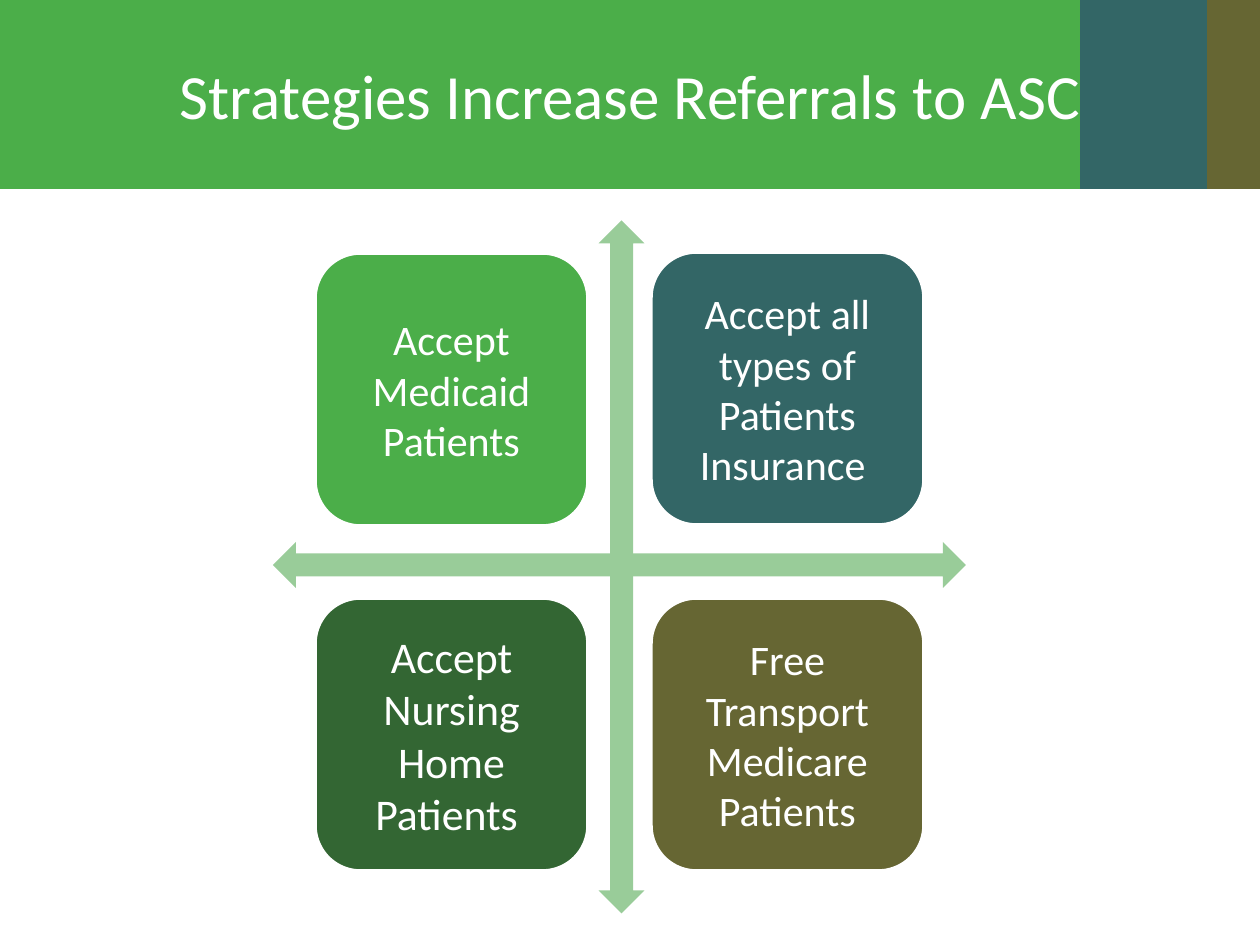
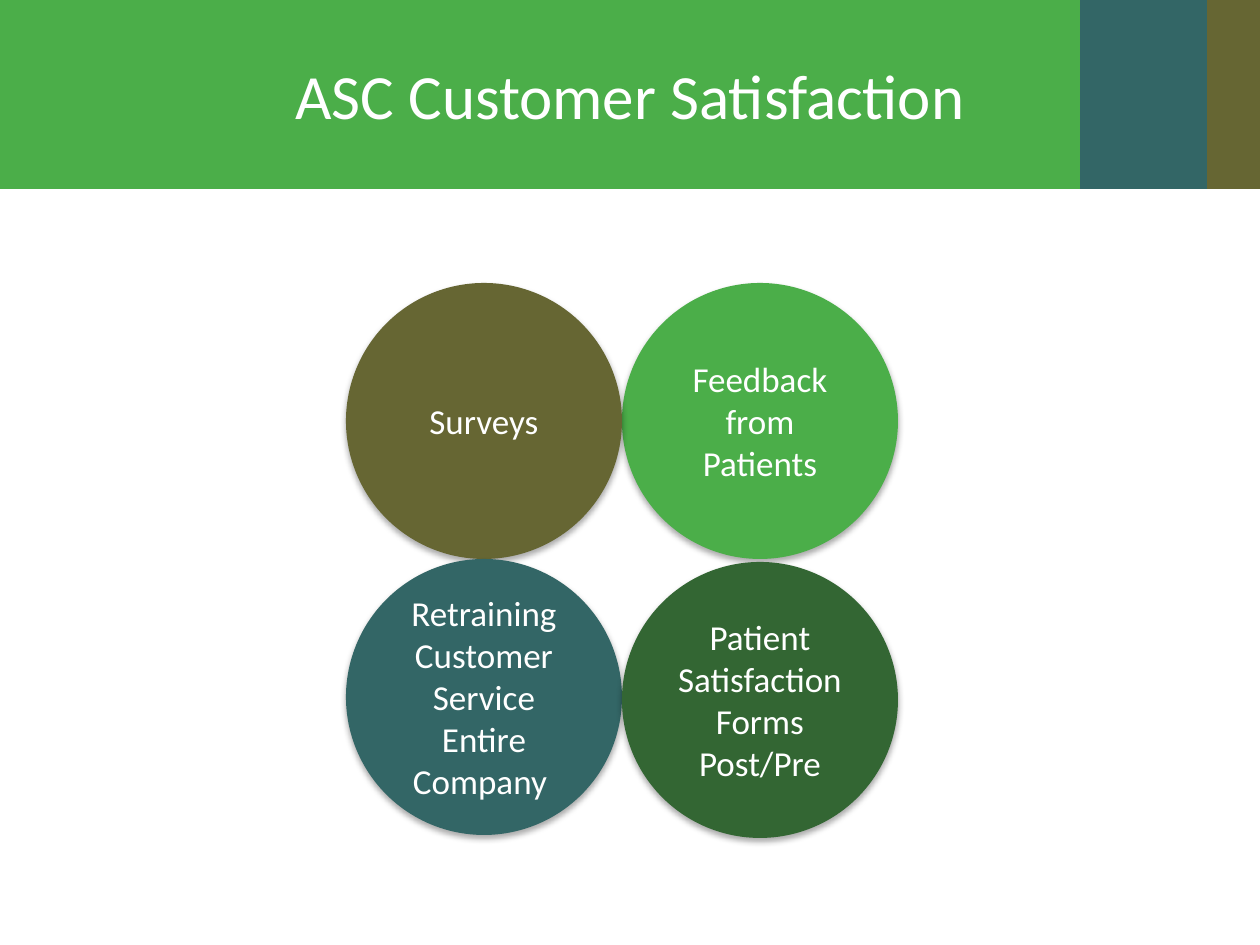
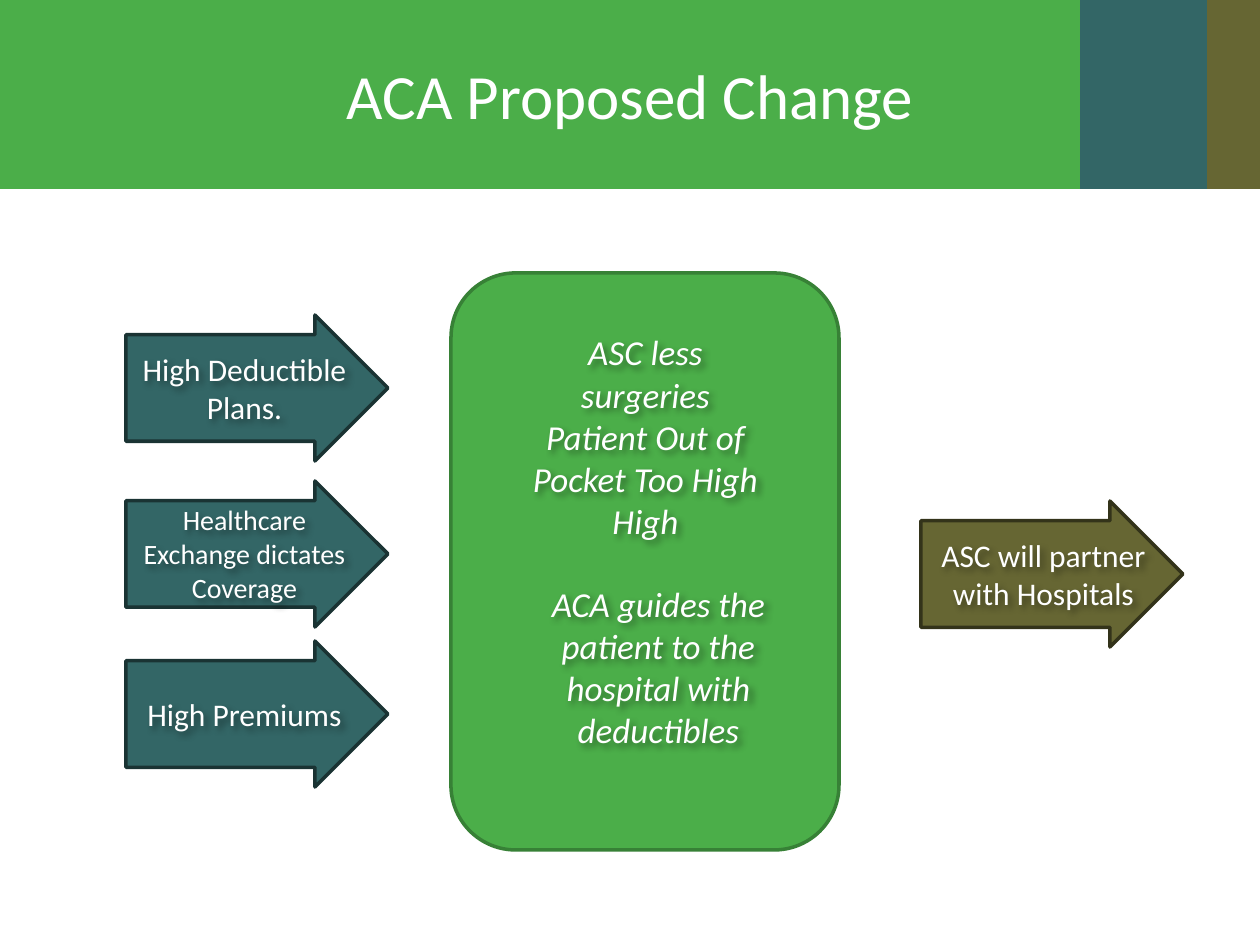
from dataclasses import dataclass

import pptx
import pptx.dml.color
import pptx.enum.shapes
import pptx.enum.text
import pptx.oxml
import pptx.oxml.ns
import pptx.util
from pptx.dml.color import RGBColor

EMU_PER_PX = 914400 / 126
SLIDE_W, SLIDE_H = 1260, 945

WHITE = RGBColor(0xFF, 0xFF, 0xFF)
BLACK = RGBColor(0x00, 0x00, 0x00)
GREEN = RGBColor(0x4B, 0xAE, 0x49)
GREEN_EDGE = RGBColor(0x37, 0x81, 0x36)
TEAL = RGBColor(0x33, 0x66, 0x66)
TEAL_EDGE = RGBColor(0x1A, 0x33, 0x33)
OLIVE = RGBColor(0x66, 0x66, 0x33)
OLIVE_EDGE = RGBColor(0x33, 0x33, 0x1A)
FOREST = RGBColor(0x33, 0x66, 0x33)
PALE_GREEN = RGBColor(0x99, 0xCC, 0x99)

FONT = "Calibri"
SHAPE = pptx.enum.shapes.MSO_SHAPE
ANCHOR = pptx.enum.text.MSO_ANCHOR
AUTO_SIZE = pptx.enum.text.MSO_AUTO_SIZE


@dataclass(frozen=True)
class Box:
    x: int
    y: int
    w: int
    h: int


@dataclass(frozen=True)
class Shadow:
    opacity: int
    blur: float
    distance: float
    angle: int


@dataclass(frozen=True)
class Tile:
    x: int
    y: int
    color: RGBColor
    text: str
    size: int = 24


@dataclass(frozen=True)
class Label:
    box: Box
    text: str
    size: int = 18
    italic: bool = False


@dataclass(frozen=True)
class FlowArrow:
    x: int
    y: int
    fill: RGBColor
    edge: RGBColor


DISC_SHADOW = Shadow(32, 3.5, 2.2, 90)
LABEL_SHADOW = Shadow(40, 4, 3, 45)

TITLE_BOX = Box(63, 10, 1134, 168)
BANDS = [
    (Box(1188, 0, 72, 189), OLIVE),
    (Box(1075, 0, 132, 189), TEAL),
    (Box(0, 0, 1080, 189), GREEN),
]

STRATEGY_SIDE = 273
STRATEGIES = [
    Tile(315, 253, GREEN, "Accept Medicaid Patients"),
    Tile(651, 252, TEAL, "Accept all types of Patients Insurance "),
    Tile(315, 598, FOREST, "Accept Nursing Home Patients ", 25),
    Tile(651, 598, OLIVE, "Free Transport Medicare Patients"),
]
AXES = [(Box(275, 544, 693, 46), 90), (Box(273, 542, 693, 46), 0)]

DISC_SIDE = 276
DISCS = [
    Tile(622, 283, GREEN, "Feedback from Patients", 20),
    Tile(346, 283, OLIVE, "Surveys", 20),
    Tile(346, 559, TEAL, "Retraining Customer Service Entire Company ", 20),
    Tile(622, 562, FOREST, "Patient Satisfaction Forms Post/Pre", 20),
]

EFFECT_PANEL = Box(451, 273, 388, 577)
FLOW_ARROWS = [FlowArrow(126, y, TEAL, TEAL_EDGE) for y in (315, 481, 641)]
FLOW_ARROWS.append(FlowArrow(921, 501, OLIVE, OLIVE_EDGE))
FLOW_LABELS = [
    Label(Box(519, 325, 253, 224),
          "ASC less surgeries Patient Out of Pocket Too High High", 20, True),
    Label(Box(532, 576, 253, 183),
          "ACA guides the patient to the hospital with deductibles", 20, True),
    Label(Box(118, 344, 253, 89), "High Deductible Plans."),
    Label(Box(118, 497, 253, 114),
          "Healthcare Exchange dictates Coverage", 16),
    Label(Box(118, 689, 253, 50), "High Premiums"),
    Label(Box(917, 530, 253, 89), "ASC will partner with Hospitals"),
]


def px(n: int) -> pptx.util.Emu:
    return pptx.util.Emu(round(n * EMU_PER_PX))


def extent(box: Box) -> tuple:
    return px(box.x), px(box.y), px(box.w), px(box.h)


def put_text(sp, text: str, *, size: int, italic: bool = False,
             anchor=ANCHOR.MIDDLE, auto_size=AUTO_SIZE.NONE) -> None:
    tf = sp.text_frame
    tf.word_wrap = True
    tf.auto_size = auto_size
    tf.vertical_anchor = anchor
    tf.margin_left = tf.margin_right = px(12)
    tf.margin_top = tf.margin_bottom = px(6)
    p = tf.paragraphs[0]
    p.alignment = pptx.enum.text.PP_ALIGN.CENTER
    r = p.add_run()
    r.text = text
    r.font.name = FONT
    r.font.size = pptx.util.Pt(size)
    r.font.italic = italic
    r.font.color.rgb = WHITE


def set_shadow(sp, shadow: Shadow | None) -> None:
    """Replace the theme shadow with the given one, or with none."""
    sp.shadow.inherit = False
    if shadow is None:
        return
    effects = sp.element.spPr.find(pptx.oxml.ns.qn("a:effectLst"))
    effects.append(pptx.oxml.parse_xml(
        f'<a:outerShdw {pptx.oxml.ns.nsdecls("a")}'
        f' blurRad="{pptx.util.Pt(shadow.blur)}"'
        f' dist="{pptx.util.Pt(shadow.distance)}"'
        f' dir="{shadow.angle * 60000}" rotWithShape="0">'
        f'<a:srgbClr val="{BLACK}"><a:alpha val="{shadow.opacity * 1000}"/>'
        '</a:srgbClr></a:outerShdw>'))


def add_shape(slide, kind, box: Box, fill: RGBColor, *,
              edge: RGBColor | None = None, shadow: Shadow | None = None):
    sp = slide.shapes.add_shape(kind, *extent(box))
    sp.fill.solid()
    sp.fill.fore_color.rgb = fill
    if edge is None:
        sp.line.fill.background()
    else:
        sp.line.color.rgb = edge
        sp.line.width = pptx.util.Pt(2)
    set_shadow(sp, shadow)
    return sp


def add_tiles(slide, kind, tiles: list[Tile], side: int, **style) -> None:
    for tile in tiles:
        sp = add_shape(slide, kind, Box(tile.x, tile.y, side, side),
                       tile.color, **style)
        put_text(sp, tile.text, size=tile.size)


def add_label(slide, label: Label) -> None:
    sp = slide.shapes.add_textbox(*extent(label.box))
    set_shadow(sp, LABEL_SHADOW)
    put_text(sp, label.text, size=label.size, italic=label.italic,
             anchor=ANCHOR.TOP, auto_size=AUTO_SIZE.SHAPE_TO_FIT_TEXT)


def add_titled_slide(prs, title: str):
    slide = prs.slides.add_slide(prs.slide_layouts[5])
    sp = slide.shapes.title
    sp.left, sp.top, sp.width, sp.height = extent(TITLE_BOX)
    put_text(sp, title, size=36)
    return slide


def move_bands_to_layout(slide) -> None:
    """Draw the header bands and hand them to the layout, behind its title."""
    layout = slide.slide_layout
    for ph in list(layout.placeholders):
        if ph.placeholder_format.idx != 0:
            layout.shapes.element.remove(ph.element)
    bands = [add_shape(slide, SHAPE.RECTANGLE, box, color)
             for box, color in BANDS]
    for i, sp in enumerate(bands):
        layout.shapes.element.insert(2 + i, sp.element)


def build_strategies(prs) -> None:
    slide = add_titled_slide(prs, "Strategies Increase Referrals to ASC")
    move_bands_to_layout(slide)
    add_tiles(slide, SHAPE.ROUNDED_RECTANGLE, STRATEGIES, STRATEGY_SIDE,
              edge=WHITE)
    for box, rotation in AXES:
        sp = add_shape(slide, SHAPE.LEFT_RIGHT_ARROW, box, PALE_GREEN)
        sp.rotation = rotation


def build_satisfaction(prs) -> None:
    slide = add_titled_slide(prs, "ASC Customer Satisfaction")
    add_tiles(slide, SHAPE.OVAL, DISCS, DISC_SIDE, shadow=DISC_SHADOW)


def build_proposed_change(prs) -> None:
    slide = add_titled_slide(prs, "ACA Proposed Change")
    add_shape(slide, SHAPE.ROUNDED_RECTANGLE, EFFECT_PANEL, GREEN,
              edge=GREEN_EDGE)
    for arrow in FLOW_ARROWS:
        sp = add_shape(slide, SHAPE.RIGHT_ARROW,
                       Box(arrow.x, arrow.y, 262, 146),
                       arrow.fill, edge=arrow.edge)
        sp.adjustments[0] = 0.73
    for label in FLOW_LABELS:
        add_label(slide, label)


def main() -> None:
    prs = pptx.Presentation()
    prs.slide_width, prs.slide_height = px(SLIDE_W), px(SLIDE_H)
    build_strategies(prs)
    build_satisfaction(prs)
    build_proposed_change(prs)
    prs.save("out.pptx")


if __name__ == "__main__":
    main()
